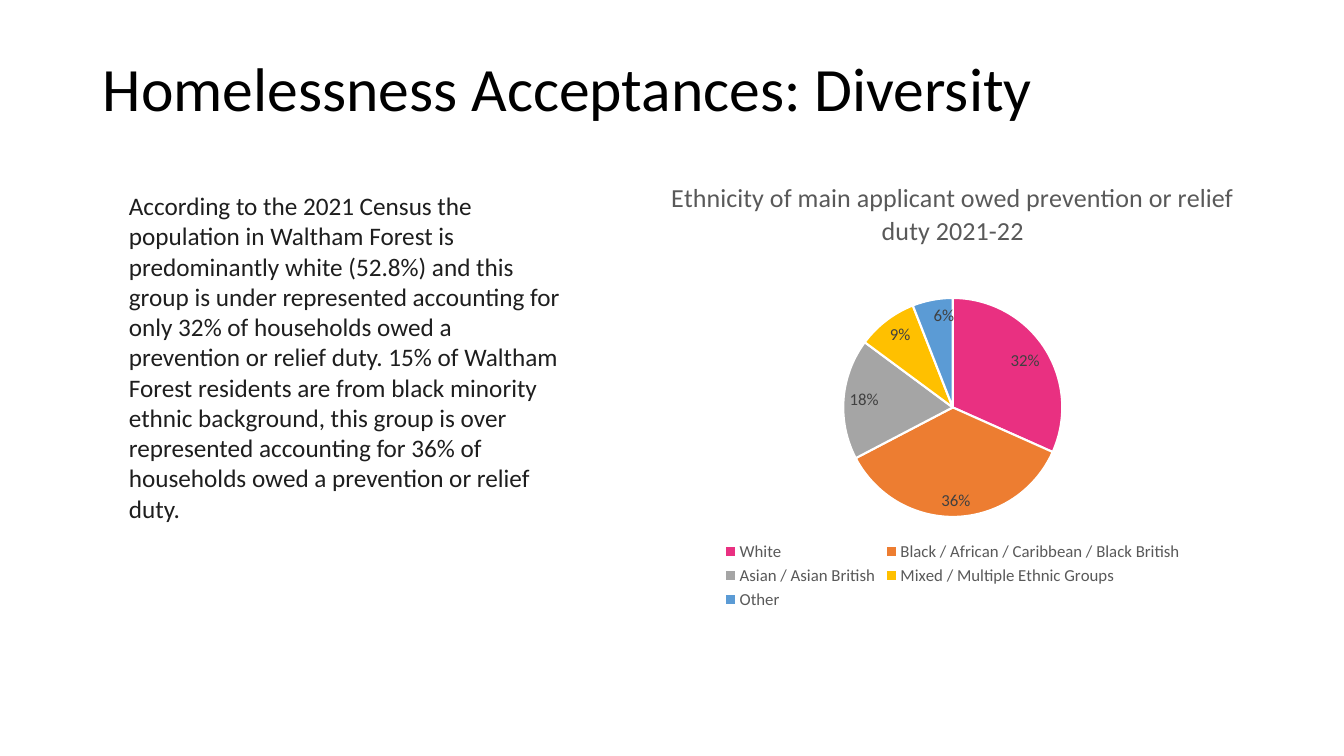
"""Build the homelessness acceptances slide with commentary and an ethnicity pie chart."""
from dataclasses import dataclass

from lxml import etree
from pptx import Presentation
from pptx import util as u
from pptx.chart.data import CategoryChartData
from pptx.dml.color import RGBColor
from pptx.enum import chart as c, text as t
from pptx.oxml import ns

TITLE = "Homelessness Acceptances: Diversity"
COMMENTARY = (
    "According to the 2021 Census the population in Waltham Forest is predominantly white (52.8%) "
    "and this group is under represented accounting for only 32% of households owed a prevention "
    "or relief duty. 15% of Waltham Forest residents are from black minority ethnic background, "
    "this group is over represented accounting for 36% of households owed a prevention or relief duty."
)
CHART_TITLE = "Ethnicity of main applicant owed prevention or relief duty 2021-22"
ETHNICITY = [
    ("White", 32, "E93081"),
    ("Black / African / Caribbean / Black British", 36, "ED7D31"),
    ("Asian / Asian British", 18, "A5A5A5"),
    ("Mixed / Multiple Ethnic Groups", 9, "FFC000"),
    ("Other", 6, "5B9BD5"),
]
WIDTH, HEIGHT = 13.33, 7.5
TITLE_BOX = (0.92, 0.4, 11.5, 1.01)
COMMENTARY_BOX = (1.18, 1.84, 4.49, 3.74)
CHART_BOX = (5.57, 1.59, WIDTH - 5.57, HEIGHT * 0.6)
PIE_SHARES = {"x": 0.36, "y": 0.3, "w": 0.28, "h": 0.49}


@dataclass(frozen=True)
class Theme:
    font: str = "Calibri"
    title: tuple = (44, "000000")
    body: tuple = (18, "1E1E1E")
    chart_title: tuple = (18.6, "595959")
    legend: tuple = (12, "595959")
    label: tuple = (12, "404040")
    gap: str = "FFFFFF"


THEME = Theme()


def inches(box):
    return [u.Inches(length) for length in box]


def style(font, role):
    size, colour = role
    font.name = THEME.font
    font.size = u.Pt(size)
    font.bold = False
    font.color.rgb = RGBColor.from_string(colour)


def add_title(slide):
    title = slide.shapes.title
    title.left, title.top, title.width, title.height = inches(TITLE_BOX)
    title.text_frame.text = TITLE
    title.text_frame.vertical_anchor = t.MSO_ANCHOR.MIDDLE
    paragraph = title.text_frame.paragraphs[0]
    paragraph.alignment = t.PP_ALIGN.LEFT
    paragraph.line_spacing = 0.9
    style(paragraph.font, THEME.title)


def add_commentary(slide):
    frame = slide.shapes.add_textbox(*inches(COMMENTARY_BOX)).text_frame
    frame.word_wrap = True
    frame.text = COMMENTARY
    style(frame.paragraphs[0].font, THEME.body)


def place_pie(chart):
    plot_area = chart.plots[0]._element.getparent()
    layout = plot_area.find(ns.qn("c:layout"))
    if layout is None:
        layout = etree.Element(ns.qn("c:layout"))
        plot_area.insert(0, layout)
    manual = etree.SubElement(layout, ns.qn("c:manualLayout"))
    settings = {"layoutTarget": "inner", "xMode": "edge", "yMode": "edge", **PIE_SHARES}
    for name, value in settings.items():
        etree.SubElement(manual, ns.qn(f"c:{name}")).set("val", str(value))


def add_ethnicity_chart(slide):
    data = CategoryChartData()
    data.categories = [group for group, _, _ in ETHNICITY]
    data.add_series("Series 1", [share for _, share, _ in ETHNICITY])
    chart = slide.shapes.add_chart(c.XL_CHART_TYPE.PIE, *inches(CHART_BOX), data).chart
    style(chart.font, THEME.legend)
    chart.has_title = True
    chart.chart_title.include_in_layout = False
    chart.chart_title.text_frame.text = CHART_TITLE
    style(chart.chart_title.text_frame.paragraphs[0].font, THEME.chart_title)

    chart.has_legend = True
    chart.legend.position = c.XL_LEGEND_POSITION.BOTTOM
    chart.legend.include_in_layout = False
    style(chart.legend.font, THEME.legend)

    plot = chart.plots[0]
    plot.vary_by_categories = True
    for index, (_, _, colour) in enumerate(ETHNICITY):
        slice_format = plot.series[0].points[index].format
        slice_format.fill.solid()
        slice_format.fill.fore_color.rgb = RGBColor.from_string(colour)
        slice_format.line.color.rgb = RGBColor.from_string(THEME.gap)
        slice_format.line.width = u.Pt(1.5)

    plot.has_data_labels = True
    labels = plot.data_labels
    labels.show_percentage = True
    labels.show_value = False
    labels.number_format = "0%"
    labels.number_format_is_linked = False
    labels.position = c.XL_LABEL_POSITION.INSIDE_END
    style(labels.font, THEME.label)
    place_pie(chart)


def main():
    presentation = Presentation()
    presentation.slide_width, presentation.slide_height = inches((WIDTH, HEIGHT))
    slide = presentation.slides.add_slide(presentation.slide_layouts.get_by_name("Title Only"))
    add_title(slide)
    add_ethnicity_chart(slide)
    add_commentary(slide)
    presentation.save("out.pptx")


if __name__ == "__main__":
    main()
